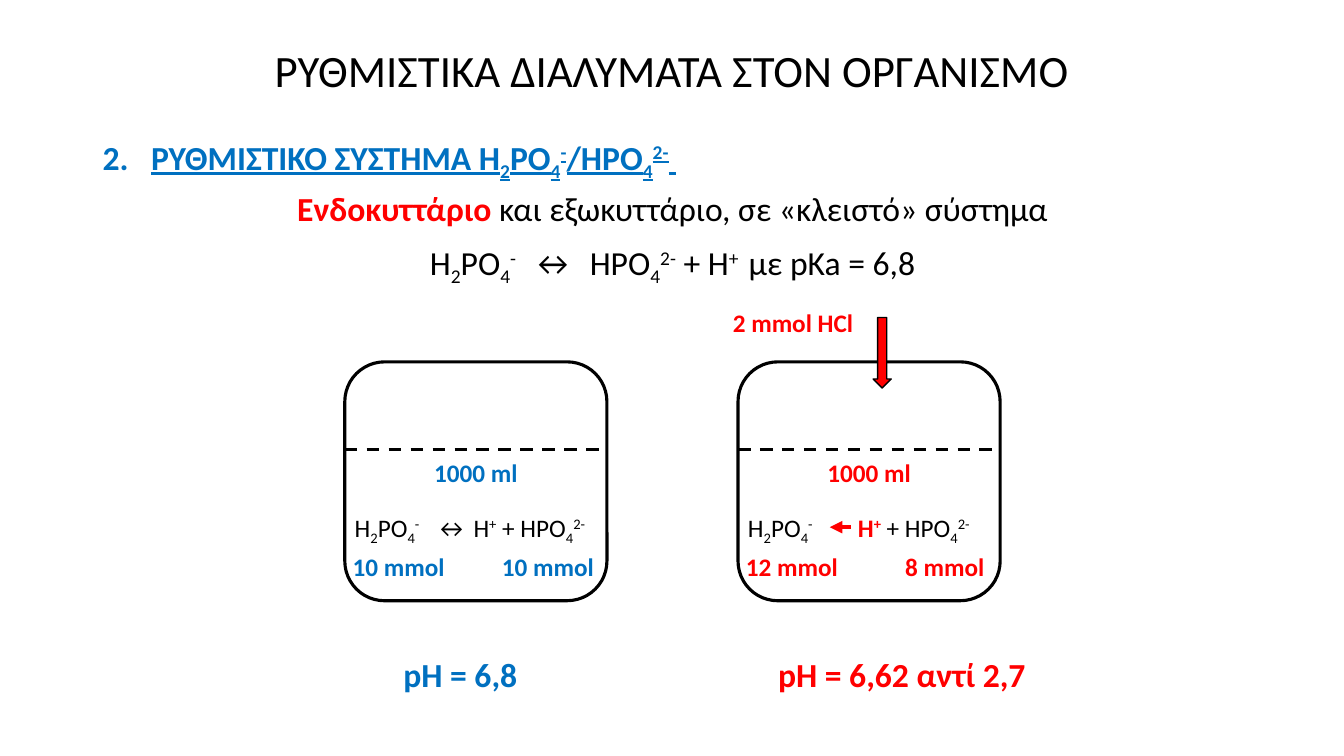
"""Build the slide on the phosphate buffer system of the body."""
from lxml import etree
from pptx import Presentation
from pptx.dml.color import RGBColor
from pptx.enum.dml import MSO_LINE
from pptx.enum.shapes import MSO_CONNECTOR, MSO_SHAPE
from pptx.enum.text import MSO_ANCHOR, PP_ALIGN
from pptx.oxml.ns import qn
from pptx.util import Inches, Pt

LEFT, CENTER = PP_ALIGN.LEFT, PP_ALIGN.CENTER
STRAIGHT = MSO_CONNECTOR.STRAIGHT
COLORS = {"black": "000000", "blue": "0070C0", "red": "FF0000"}
FONT = "Calibri"
SLIDE_W, SLIDE_H = 13.33, 7.5

# Runs are split by "|"; flags: _ subscript, ^ superscript, ! underline,
# * bold red; ~n is a space widened by n hundredths of a point.
TITLE = "ΡΥΘΜΙΣΤΙΚΑ ΔΙΑΛΥΜΑΤΑ ΣΤΟΝ ΟΡΓΑΝΙΣΜΟ"
HEADING = "2.\t|!ΡΥΘΜΙΣΤΙΚΟ ΣΥΣΤΗΜΑ H|!_2|!PO|!_4|!^-|!/HPO|!_4|!^2-|! "
LOCATION = "*Ενδοκυττάριο| και εξωκυττάριο, σε «κλειστό» σύστημα"
REACTION = "H|_2|PO|_4|^-|~540|↔|~540|HPO|_4|^2-| + H|^+|~180|με pKa = 6,8"
ADDED_ACID = "2 mmol HCl"
VOLUME = "1000 ml"
TANKS = [
    {"color": "blue", "equation": "H|_2|PO|_4|^-|\t↔ Η|^+| + HPO|_4|^2-",
     "equation_tab": 0.8, "amounts": "10 mmol\t10 mmol", "amounts_tab": 1.48,
     "ph": "pΗ = 6,8", "ph_shift": -0.8},
    {"color": "red", "equation": "H|_2|PO|_4|^-|\t|*Η|*^+| + HPO|_4|^2-",
     "equation_tab": 1.09, "amounts": "12 mmol\t8 mmol", "amounts_tab": 1.58,
     "ph": "pΗ = 6,62 αντί 2,7", "ph_shift": -0.32},
]

TANK_X, TANK_STEP, TANK_Y = 3.42, 3.9, 3.59
TANK_W, TANK_H = 2.6, 2.37
LABEL_H = 0.4
ROWS = {"level": 4.46, "volume": 4.49, "equation": 5.03, "amounts": 5.42, "ph": 6.44}

deck = Presentation()
deck.slide_width, deck.slide_height = Inches(SLIDE_W), Inches(SLIDE_H)
slide = deck.slides.add_slide(deck.slide_layouts[6])


def rgb(name):
    return RGBColor.from_string(COLORS[name])


def add_run(paragraph, part, size, color, bold):
    flags = ""
    while part[0] in "_^!*~":
        flags, part = flags + part[0], part[1:]
    run = paragraph.add_run()
    run.text = " " if "~" in flags else part
    font = run.font
    font.name, font.size = FONT, Pt(size)
    font.bold = bold or "*" in flags
    font.underline = "!" in flags
    font.color.rgb = rgb("red" if "*" in flags else color)
    properties = run._r.get_or_add_rPr()
    if "_" in flags:
        properties.set("baseline", "-25000")
    if "^" in flags:
        properties.set("baseline", "30000")
    if "~" in flags:
        properties.set("spc", part)


def write(paragraph, text, size=18, color="black", bold=False, align=LEFT,
          tab=None, hanging=None, spacing=None, before=0):
    paragraph.alignment = align
    paragraph.line_spacing = spacing
    paragraph.space_before = Pt(before)
    properties = paragraph._p.get_or_add_pPr()
    if hanging:
        properties.set("marL", str(Inches(hanging)))
        properties.set("indent", str(-Inches(hanging)))
    if tab:
        stops = etree.SubElement(properties, qn("a:tabLst"))
        etree.SubElement(stops, qn("a:tab"), pos=str(Inches(tab)), algn="l")
    for part in text.split("|"):
        add_run(paragraph, part, size, color, bold)


def add_text(text, x, y, w, h, anchor=MSO_ANCHOR.TOP, **style):
    frame = slide.shapes.add_textbox(*map(Inches, (x, y, w, h))).text_frame
    frame.word_wrap = True
    frame.vertical_anchor = anchor
    write(frame.paragraphs[0], text, **style)
    return frame


def add_outline(preset, x, y, w, h, width, fill=None):
    shape = slide.shapes.add_shape(preset, *map(Inches, (x, y, w, h)))
    shape.shadow.inherit = False
    shape.line.color.rgb = rgb("black")
    shape.line.width = Pt(width)
    if fill:
        shape.fill.solid()
        shape.fill.fore_color.rgb = rgb(fill)
    else:
        shape.fill.background()


def add_line(x1, x2, y, color, width):
    connector = slide.shapes.add_connector(STRAIGHT, *map(Inches, (x1, y, x2, y)))
    connector.line.color.rgb = rgb(color)
    connector.line.width = Pt(width)
    etree.SubElement(connector._element.spPr, qn("a:effectLst"))
    return connector.line


add_text(TITLE, 0, 0, SLIDE_W, 1.45, anchor=MSO_ANCHOR.MIDDLE,
         size=32, align=CENTER, spacing=0.9)

body = add_text(HEADING, 0.92, 1.31, 11.5, 1.88, size=24, color="blue", bold=True,
                hanging=0.48, spacing=0.9)
for sentence in (LOCATION, REACTION):
    write(body.add_paragraph(), sentence, size=24, align=CENTER, spacing=0.9, before=10)

for index, tank in enumerate(TANKS):
    x = TANK_X + index * TANK_STEP
    accent = {"color": tank["color"], "bold": True}
    add_outline(MSO_SHAPE.ROUNDED_RECTANGLE, x, TANK_Y, TANK_W, TANK_H, 2.25)
    add_line(x, x + TANK_W, ROWS["level"], "black", 2.25).dash_style = MSO_LINE.DASH
    add_text(VOLUME, x, ROWS["volume"], TANK_W, LABEL_H, align=CENTER, **accent)
    add_text(tank["equation"], x, ROWS["equation"], TANK_W, LABEL_H,
             tab=tank["equation_tab"])
    add_text(tank["amounts"], x - 0.02, ROWS["amounts"], TANK_W, LABEL_H,
             tab=tank["amounts_tab"], **accent)
    add_text(tank["ph"], x + tank["ph_shift"], ROWS["ph"], 3.89, 0.5,
             size=24, align=CENTER, **accent)

add_text(ADDED_ACID, 7.17, 3, 1.67, LABEL_H, color="red", bold=True)
add_outline(MSO_SHAPE.DOWN_ARROW, 8.66, 3.15, 0.18, 0.7, 1, fill="red")
shift = add_line(8.44, 8.23, 5.23, "red", 3)
etree.SubElement(shift._get_or_add_ln(), qn("a:tailEnd"), type="triangle")

deck.save("out.pptx")
